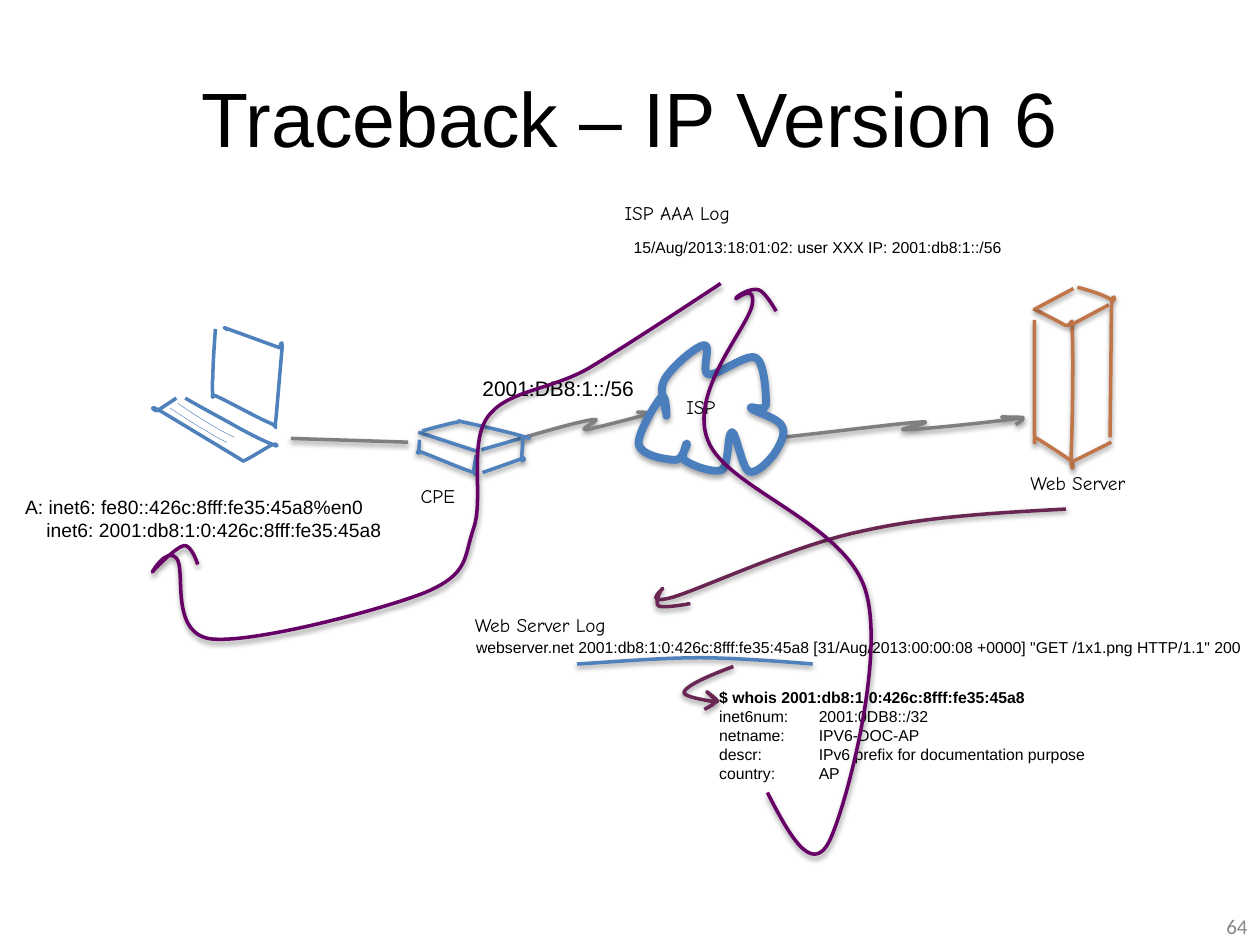
"""Build the IPv6 traceback slide: a hand-drawn network with log extracts."""
from lxml import etree
from pptx import Presentation
from pptx.dml.color import RGBColor
from pptx.enum.text import MSO_ANCHOR, MSO_AUTO_SIZE, PP_ALIGN
from pptx.oxml.ns import qn
from pptx.util import Inches, Pt

MIDDLE = MSO_ANCHOR.MIDDLE
GROW = MSO_AUTO_SIZE.SHAPE_TO_FIT_TEXT
LEFT, CENTER, RIGHT = PP_ALIGN.LEFT, PP_ALIGN.CENTER, PP_ALIGN.RIGHT

THEME = {
    "blue": "4F81BD", "cloud": "4B7EBC", "orange": "C1764A", "link": "7F7F7F",
    "plum": "692652", "purple": "660066", "text": "000000", "muted": "898989",
    "title": ("Arial", 44), "hand": ("Comic Neue", 11), "log": ("Arial", 9),
    "prefix": ("Arial", 12), "host": ("Arial", 11), "number": ("Calibri", 12),
}
UNITS = 100
STEPS = 12

TITLE = ("Traceback – IP Version 6", (0.29, 0.3, 9.42, 1.25))
NUMBER = ("64", (7.67, 7.15, 2.33, 0.4))

# Each stroke is a start point followed by lines (2 numbers) or curves (6 numbers), in 1/100 inch
LAPTOP = [
    (2, [(171, 261), (170, 276, 169, 290, 169, 299), (168, 308, 169, 312, 169, 315),
         (170, 317, 165, 311, 173, 315), (180, 318, 207, 333, 215, 336),
         (222, 339, 217, 343, 219, 333), (220, 323, 223, 286, 224, 276),
         (224, 267, 222, 276, 222, 276), (178, 260), (181, 262)]),
    (2, [(147, 316), (159, 323, 172, 330, 183, 336), (195, 343, 211, 351, 217, 353),
         (222, 356, 220, 351, 216, 353), (212, 355, 198, 364, 193, 366), (190, 364),
         (127, 326), (116, 320, 123, 327, 125, 326), (128, 324, 140, 316, 140, 316)]),
    (0.25, [(135, 324), (146, 331, 156, 338, 164, 342), (171, 347, 180, 351, 180, 351)]),
    (0.25, [(141, 320), (151, 327, 162, 334, 169, 338), (177, 343, 186, 347, 186, 347)]),
]
LINKS = [
    (2, [(413, 348), (437, 341, 462, 334, 471, 333), (480, 332, 458, 341, 465, 341),
         (472, 340, 506, 331, 513, 329), (520, 327, 505, 327, 506, 327),
         (506, 327, 513, 328, 514, 329), (515, 330, 511, 335, 511, 335)]),
    (2, [(622, 347), (668, 342, 714, 336, 731, 335), (747, 334, 706, 342, 719, 341),
         (732, 341, 796, 334, 809, 332), (821, 331, 795, 331, 795, 331),
         (796, 331, 810, 331, 812, 332), (813, 333, 806, 337, 806, 337)]),
    (2, [(231, 348), (324, 351)]),
]
CLOUD = [
    (4.5, [(608, 321), (608, 314, 607, 288, 600, 284), (592, 280, 569, 299, 562, 297),
           (556, 296, 565, 273, 559, 274), (553, 274, 532, 292, 527, 302),
           (522, 311, 530, 328, 529, 330), (529, 332, 529, 311, 525, 315),
           (521, 319, 505, 345, 507, 353), (509, 362, 530, 365, 536, 365),
           (543, 365, 544, 352, 545, 352), (547, 352, 539, 362, 543, 365),
           (548, 369, 566, 376, 573, 373), (579, 369, 577, 343, 581, 343),
           (584, 343, 589, 371, 594, 374), (600, 377, 609, 367, 614, 361),
           (618, 355, 624, 345, 621, 339), (619, 332, 599, 327, 596, 324),
           (594, 321, 607, 328, 608, 321)]),
]
SERVER = [
    (2, [(821, 254), (821, 291, 821, 329, 821, 345), (822, 360, 819, 344, 823, 348),
         (828, 351, 845, 362, 849, 365), (854, 367, 850, 380, 850, 363),
         (851, 346, 852, 281, 851, 264), (851, 246, 851, 261, 845, 258),
         (840, 255, 820, 245, 820, 245)]),
    (2, [(850, 258), (880, 242)]),
    (2, [(852, 366), (882, 351)]),
    (2, [(822, 245), (852, 229)]),
    (2, [(855, 228), (867, 231, 878, 235, 882, 238), (887, 241, 883, 227, 882, 245),
         (882, 263, 881, 347, 881, 347)]),
]
ROUTER = [
    (2, [(333, 349), (333, 353, 332, 358, 333, 359), (333, 361, 328, 357, 335, 359),
         (343, 362, 369, 373, 376, 375), (382, 378, 375, 377, 376, 374),
         (376, 372, 378, 361, 378, 361)]),
    (2, [(332, 343), (378, 358)]),
    (2, [(382, 357), (413, 348)]),
    (2, [(335, 342), (346, 339, 357, 336, 363, 335), (368, 334, 359, 333, 368, 335),
         (377, 337, 409, 344, 417, 347), (425, 349, 416, 345, 415, 348),
         (415, 351, 414, 362, 414, 365), (414, 368, 419, 362, 414, 364),
         (409, 366, 383, 375, 383, 375)]),
]
UNDERLINE = [(2, [(458, 527), (491, 525, 525, 522, 556, 522), (588, 522, 645, 527, 645, 527)])]
LOG_ARROWS = [
    (2, [(846, 404), (790, 407, 734, 410, 682, 422), (630, 433, 560, 466, 534, 474),
         (508, 481, 528, 466, 526, 467), (524, 468, 519, 479, 523, 481),
         (527, 483, 548, 479, 548, 479)]),
    (2, [(582, 529), (563, 536, 545, 544, 543, 549), (540, 553, 566, 557, 569, 557),
         (572, 557, 561, 549, 561, 549), (560, 549, 568, 554, 568, 557),
         (567, 559, 559, 563, 559, 563)]),
]
TRACES = [
    (2, [(609, 629), (626, 662, 644, 695, 658, 668), (671, 642, 703, 522, 687, 469),
         (671, 415, 577, 388, 562, 350), (546, 312, 593, 261, 597, 242),
         (600, 223, 583, 239, 584, 237), (584, 235, 596, 228, 602, 230),
         (607, 231, 616, 247, 616, 247)]),
    (2, [(572, 225), (534, 250, 496, 275, 466, 293), (435, 310, 402, 310, 387, 331),
         (372, 352, 384, 396, 376, 419), (368, 442, 373, 455, 338, 470),
         (303, 484, 200, 511, 167, 507), (134, 502, 148, 451, 140, 443),
         (132, 434, 120, 455, 121, 454), (122, 452, 140, 434, 146, 433),
         (152, 432, 157, 448, 157, 448)]),
]
SKETCHES = [
    (LAPTOP, "blue", None), (LINKS, "link", (38, 1.6)), (CLOUD, "cloud", (35, 1.8)),
    (SERVER, "orange", (38, 1.6)), (ROUTER, "blue", (38, 1.6)),
    (UNDERLINE, "blue", (38, 1.6)), (LOG_ARROWS, "plum", (38, 1.6)),
]

LABELS = [
    ("hand", (8.08, 3.69, 1.16, 0.29), False, ["Web Server"]),
    ("hand", (5.35, 3.09, 0.5, 0.29), False, ["ISP"]),
    ("log", (3.68, 5.01, 6.33, 0.25), False,
     ['webserver.net 2001:db8:1:0:426c:8fff:fe35:45a8 [31/Aug/2013:00:00:08 +0000] '
      '"GET /1x1.png HTTP/1.1" 200']),
    ("hand", (3.67, 4.82, 1.54, 0.29), False, ["Web Server Log"]),
    ("hand", (3.24, 3.79, 0.59, 0.29), False, ["CPE"]),
    ("hand", (4.86, 1.55, 1.26, 0.29), False, ["ISP AAA Log"]),
    ("log", (4.93, 1.84, 5.15, 0.25), True,
     ["15/Aug/2013:18:01:02: user XXX IP: 2001:db8:1::/56"]),
    ("prefix", (3.73, 2.93, 1.42, 0.3), False, ["2001:DB8:1::/56"]),
]
HOST = ("host", (0.1, 3.88, 3.11, 0.47), False,
        ["A: inet6: fe80::426c:8fff:fe35:45a8%en0",
         "inet6: 2001:db8:1:0:426c:8fff:fe35:45a8"])
WHOIS = ("log", (5.61, 5.41, 4.34, 0.86), True,
         ["$ whois 2001:db8:1:0:426c:8fff:fe35:45a8", "inet6num:\t2001:0DB8::/32",
          "netname:\tIPV6-DOC-AP", "descr:\tIPv6 prefix for documentation purpose",
          "country:\tAP"])


def outline(points):
    """Return sample points along a stroke, so its box fits the curves."""
    out = [points[0]]
    for seg in points[1:]:
        if len(seg) == 2:
            out.append(seg)
            continue
        ctrl = [out[-1], seg[:2], seg[2:4], seg[4:]]
        for i in range(1, STEPS + 1):
            t = i / STEPS
            weights = ((1 - t) ** 3, 3 * t * (1 - t) ** 2, 3 * t * t * (1 - t), t ** 3)
            out.append(tuple(sum(w * c[k] for w, c in zip(weights, ctrl)) for k in (0, 1)))
    return out


def add_stroke(shapes, points, width, color, shadow):
    """Draw one stroke with true curves and an optional soft shadow."""
    samples = outline(points)
    closed = samples[0] == samples[-1]
    builder = shapes.build_freeform(*samples[0], scale=Inches(1) / UNITS)
    builder.add_line_segments(samples[1:], close=closed)
    sp = builder.convert_to_shape()
    x0, y0 = (round(min(round(p[k]) for p in samples)) for k in (0, 1))
    path = sp._element.find(".//" + qn("a:path"))
    for node in path[1:]:
        path.remove(node)
    for seg in points[1:]:
        node = etree.SubElement(path, qn("a:lnTo" if len(seg) == 2 else "a:cubicBezTo"))
        for x, y in zip(seg[::2], seg[1::2]):
            etree.SubElement(node, qn("a:pt"), x=str(x - x0), y=str(y - y0))
    if closed:
        etree.SubElement(path, qn("a:close"))
    sp.fill.background()
    sp.line.color.rgb = RGBColor.from_string(THEME[color])
    sp.line.width = Pt(width)
    sp.shadow.inherit = False
    if shadow:
        alpha, dist = shadow
        effects = sp._element.spPr.find(qn("a:effectLst"))
        outer = etree.SubElement(effects, qn("a:outerShdw"), blurRad=str(Pt(3.1)),
                                 dist=str(Pt(dist)), dir="5400000", rotWithShape="0")
        black = etree.SubElement(outer, qn("a:srgbClr"), val="000000")
        etree.SubElement(black, qn("a:alpha"), val=str(alpha * 1000))
    return sp


def place(sp, box):
    """Move and size a shape."""
    for name, value in zip(("left", "top", "width", "height"), box):
        setattr(sp, name, Inches(value))


def write(tf, lines, style, color="text", align=LEFT):
    """Fill a text frame with one paragraph per line."""
    name, size = THEME[style]
    for i, line in enumerate(lines):
        p = tf.add_paragraph() if i else tf.paragraphs[0]
        p.alignment = align
        r = p.add_run()
        r.text = line
        for key, value in {"name": name, "size": Pt(size)}.items():
            setattr(r.font, key, value)
        r.font.color.rgb = RGBColor.from_string(THEME[color])


def add_label(s, style, box, wrap, lines):
    """Add a text box that grows with its text."""
    tf = s.shapes.add_textbox(*map(Inches, box)).text_frame
    tf.word_wrap = wrap
    tf.auto_size = GROW
    write(tf, lines, style)
    return tf


def main():
    """Assemble and save the slide."""
    prs = Presentation()
    prs.slide_width, prs.slide_height = Inches(10), Inches(7.5)
    s = prs.slides.add_slide(prs.slide_layouts[5])
    text, box = TITLE
    place(s.shapes.title, box)
    s.shapes.title.text_frame.vertical_anchor = MIDDLE
    write(s.shapes.title.text_frame, [text], "title", align=CENTER)

    text, box = NUMBER
    tf = s.shapes.add_textbox(*map(Inches, box)).text_frame
    tf.word_wrap, tf.vertical_anchor = True, MIDDLE
    write(tf, [text], "number", "muted", RIGHT)

    for strokes, color, shadow in SKETCHES:
        parts = [add_stroke(s.shapes, pts, w, color, shadow) for w, pts in strokes]
        if strokes in (LAPTOP, SERVER, ROUTER):
            s.shapes.add_group_shape(parts)

    for label in LABELS:
        add_label(s, *label)
    tf = add_label(s, *HOST)
    tf.paragraphs[1]._p.get_or_add_pPr().set("marL", str(Inches(0.17)))
    tf = add_label(s, *WHOIS)
    tf.paragraphs[0].runs[0].font.bold = True
    for p in tf.paragraphs[1:]:
        tabs = etree.SubElement(p._p.get_or_add_pPr(), qn("a:tabLst"))
        etree.SubElement(tabs, qn("a:tab"), pos=str(Inches(0.79)), algn="l")

    for width, points in TRACES:
        add_stroke(s.shapes, points, width, "purple", (38, 1.6))
    prs.save("out.pptx")


if __name__ == "__main__":
    main()
